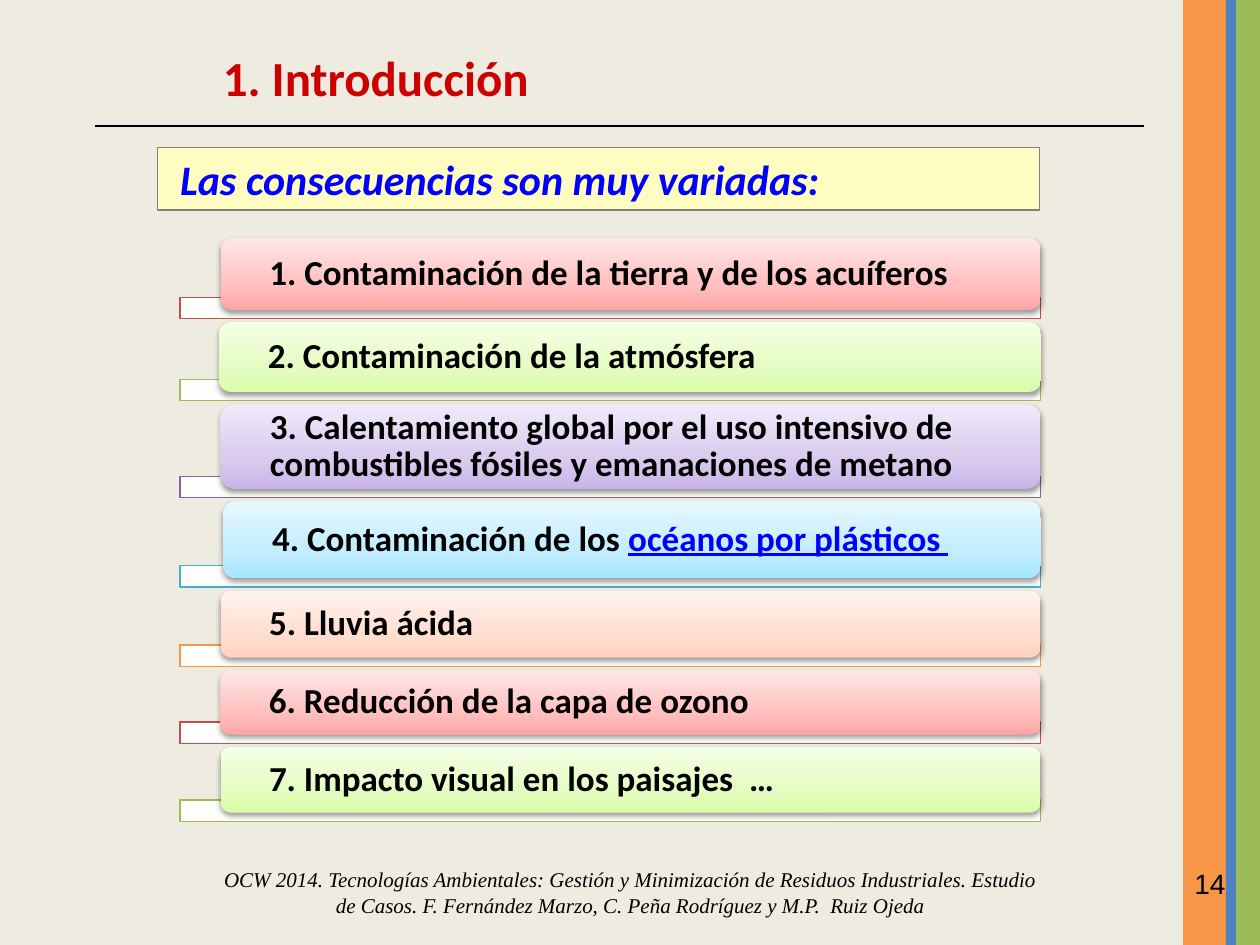
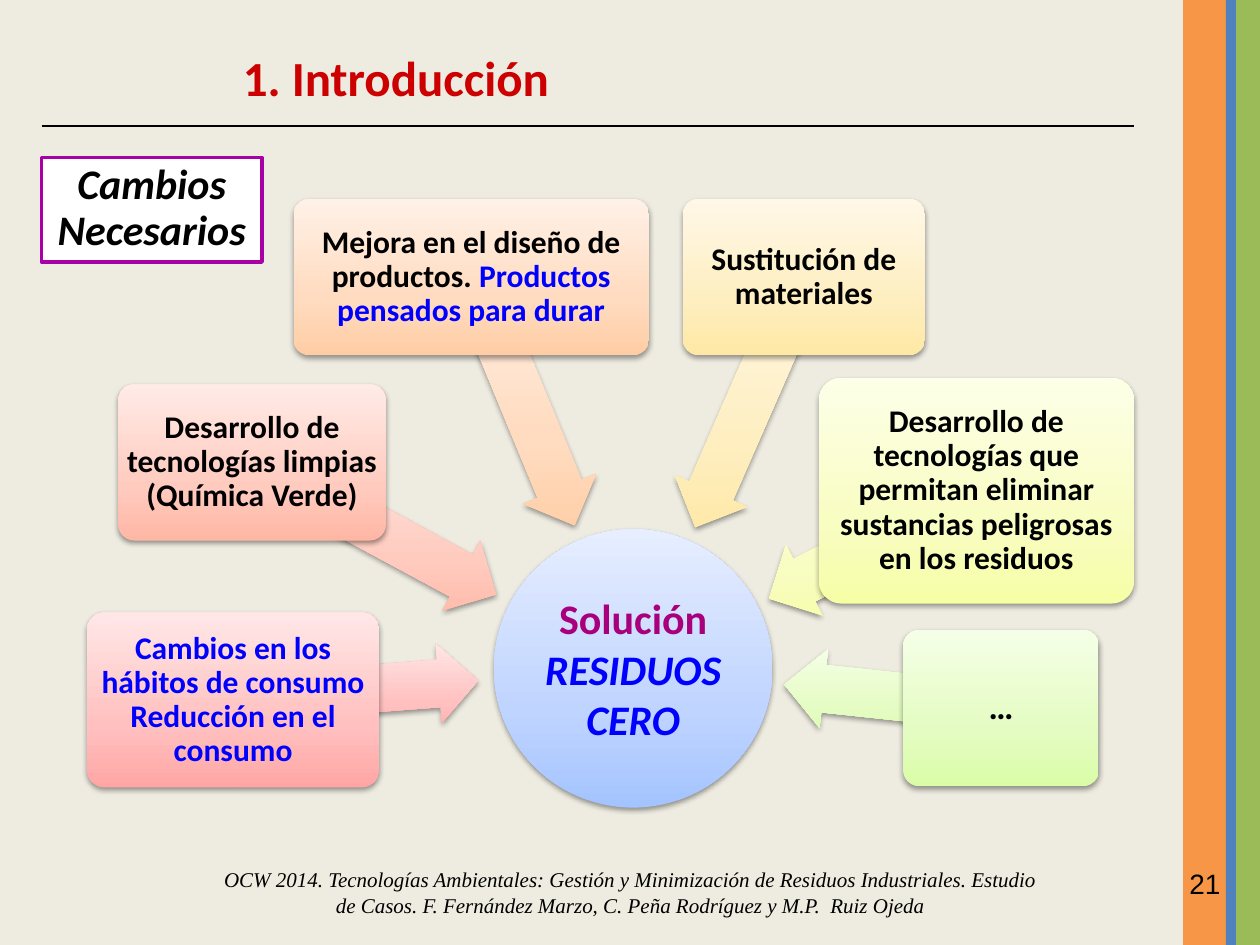
"""Build two slides on the consequences of waste and the changes it calls for."""
from pptx import Presentation
from pptx.dml.color import RGBColor
from pptx.enum.shapes import MSO_CONNECTOR, MSO_SHAPE
from pptx.enum.text import MSO_ANCHOR, PP_ALIGN
from pptx.oxml import parse_xml
from pptx.oxml.ns import nsdecls, qn
from pptx.util import Inches, Pt

BACKGROUND, BLACK, WHITE, BLUE = "EEECE1", "000000", "FFFFFF", "0000FF"
RED, PURPLE, MAGENTA = "CC0000", "A800A6", "A8007D"
FOOTER = ("OCW 2014. Tecnologías Ambientales: Gestión y Minimización de Residuos "
          "Industriales. Estudio de Casos. F. Fernández Marzo, C. Peña Rodríguez "
          "y M.P.  Ruiz Ojeda")
BANDS = [(9.39, 0.35, "F79646"), (9.73, 0.08, "4F81BD"), (9.81, 0.19, "9BBB59")]
ROSE = ("FFA6A5", "FFC0BF", "FFE7E7")
SALMON = ("FFB7A5", "FFCBBF", "FFEBE7")
PEACH = ("FFD2BD", "FFDED0", "FFF2ED")
ORANGE = ("FFCDA5", "FFDBBF", "FFF1E7")
GOLD = ("FFE8A5", "FEEEC0", "FFF8E7")
YELLOW = ("F6FEA6", "F8FDC1", "FDFFE7")
GREEN = ("DAFDA7", "E4FCC2", "F5FFE7")
LILAC = ("C9B5E8", "D8CBEE", "F0EAF9")
SKY = ("A7E6FF", "C1EDFF", "E7F8FF")
AZURE = ("A4C4FF", "BFD4FF", "E6EEFF")


def add_block(slide, kind, box, fill=None, line=None, line_width=0.75):
    """Add a shape; a tuple fill makes a shaded block with a soft shadow."""
    left, top, width, height = (Inches(value) for value in box)
    if kind is None:
        return slide.shapes.add_textbox(left, top, width, height)
    block = slide.shapes.add_shape(kind, left, top, width, height)
    if line:
        block.line.color.rgb = RGBColor.from_string(line)
        block.line.width = Pt(line_width)
    else:
        block.line.fill.background()
    if isinstance(fill, str):
        block.shadow.inherit = False
        block.fill.solid()
        block.fill.fore_color.rgb = RGBColor.from_string(fill)
        return block
    stops = "".join(f'<a:gs pos="{position}"><a:srgbClr val="{color}"/></a:gs>'
                    for position, color in zip((0, 35000, 100000), fill))
    properties = block._element.spPr
    properties.find(qn("a:ln")).addprevious(parse_xml(
        f'<a:gradFill {nsdecls("a")} rotWithShape="0"><a:gsLst>{stops}</a:gsLst>'
        '<a:lin ang="16200000" scaled="0"/></a:gradFill>'))
    properties.append(parse_xml(
        f'<a:effectLst {nsdecls("a")}><a:outerShdw blurRad="40000" dist="20000" '
        'dir="5400000" rotWithShape="0"><a:srgbClr val="000000"><a:alpha val="38000"/>'
        '</a:srgbClr></a:outerShdw></a:effectLst>'))
    return block


def write(block, paragraphs, size, font="Calibri", align=PP_ALIGN.LEFT,
          anchor=MSO_ANCHOR.TOP, margins=(0.1, 0.05, 0.1, 0.05), spacing=None):
    """Fill a block with paragraphs of (text, colour, *styles) runs."""
    frame = block.text_frame
    frame.word_wrap = True
    frame.vertical_anchor = anchor
    (frame.margin_left, frame.margin_top,
     frame.margin_right, frame.margin_bottom) = (Inches(margin) for margin in margins)
    for index, runs in enumerate(paragraphs):
        paragraph = frame.add_paragraph() if index else frame.paragraphs[0]
        paragraph.alignment = align
        paragraph.line_spacing = spacing
        for text, color, *styles in runs:
            run = paragraph.add_run()
            run.text = text
            run.font.name = font
            run.font.size = Pt(size)
            run.font.color.rgb = RGBColor.from_string(color)
            for style in styles:
                setattr(run.font, style, True)


prs = Presentation()
prs.slide_width, prs.slide_height = Inches(10), Inches(7.5)
prs.slide_master.background.fill.solid()
prs.slide_master.background.fill.fore_color.rgb = RGBColor.from_string(BACKGROUND)

slides = []
for number, number_left, title_left, rule_start, rule_end in [
    ("14", 9.38, 1.67, 0.75, 9.08),
    ("21", 9.34, 1.83, 0.33, 9),
]:
    slide = prs.slides.add_slide(prs.slide_layouts[6])
    slides.append(slide)
    for left, width, color in BANDS:
        add_block(slide, MSO_SHAPE.RECTANGLE, (left, 0, width, 7.5), color)
    rule = slide.shapes.add_connector(
        MSO_CONNECTOR.STRAIGHT, Inches(rule_start), Inches(1), Inches(rule_end), Inches(1))
    rule.line.color.rgb = RGBColor.from_string(BLACK)
    rule.line.width = Pt(0.75)
    rule._element.spPr.append(parse_xml(f'<a:effectLst {nsdecls("a")}/>'))
    write(add_block(slide, None, (title_left, 0.33, 5.42, 0.57)),
          [[("1. Introducción", RED, "bold")]], 28)
    write(add_block(slide, None, (number_left, 6.83, 0.62, 0.52)),
          [[(number, BLACK)]], 16, "Arial")
    write(add_block(slide, None, (1.67, 6.83, 6.67, 0.5)), [[(FOOTER, BLACK, "italic")]],
          12, "Times New Roman", PP_ALIGN.CENTER, MSO_ANCHOR.MIDDLE)
consequences_slide, changes_slide = slides

consequences = [
    (1.75, 0.57, ROSE, "C0504D",
     [("1. Contaminación de la tierra y de los acuíferos", BLACK, "bold")]),
    (1.74, 0.55, GREEN, "9BBB59", [("2. Contaminación de la atmósfera", BLACK, "bold")]),
    (1.75, 0.67, LILAC, "8064A2",
     [("3. Calentamiento global por el uso intensivo de combustibles fósiles "
       "y emanaciones de metano", BLACK, "bold")]),
    (1.77, 0.61, SKY, "4BACC6",
     [("4. Contaminación de los ", BLACK, "bold"),
      ("océanos por plásticos ", BLUE, "bold", "underline")]),
    (1.75, 0.53, PEACH, "F79646", [("5. Lluvia ácida", BLACK, "bold")]),
    (1.75, 0.51, ROSE, "C0504D", [("6. Reducción de la capa de ozono", BLACK, "bold")]),
    (1.75, 0.52, GREEN, "9BBB59",
     [("7. Impacto visual en los paisajes  …", BLACK, "bold")]),
]
top = 1.89
for left, height, shades, outline, runs in consequences:
    tray = add_block(consequences_slide, MSO_SHAPE.RECTANGLE,
                     (1.43, top + height - 0.1, 6.83, 0.17), WHITE, outline)
    tray_color = tray._element.spPr.find(qn("a:solidFill"))[0]
    tray_color.append(parse_xml(f'<a:alpha {nsdecls("a")} val="90000"/>'))
    label = add_block(consequences_slide, MSO_SHAPE.ROUNDED_RECTANGLE,
                      (left, top, 8.26 - left, height), shades)
    write(label, [runs], 20, anchor=MSO_ANCHOR.MIDDLE,
          margins=(0.36, 0, 0.15, 0), spacing=0.9)
    top += height + 0.1

lead = add_block(consequences_slide, MSO_SHAPE.RECTANGLE, (1.25, 1.17, 7, 0.5),
                 "FFFCC1", "808080", 1)
write(lead, [[("Las consecuencias son muy variadas:", BLUE, "bold", "italic")]], 24,
      margins=(0.18, 0.05, 0.1, 0.05))

solution = add_block(changes_slide, MSO_SHAPE.OVAL, (3.92, 4.2, 2.21, 2.21), AZURE)
write(solution, [[("Solución", MAGENTA, "bold")],
                 [("RESIDUOS CERO", BLUE, "bold", "italic")]],
      24, align=PP_ALIGN.CENTER, anchor=MSO_ANCHOR.MIDDLE, margins=(0.02,) * 4)

changes = [
    (ROSE, (1.84, 5.16, 1.96), 175.6, (0.69, 4.86, 2.32, 1.39), 18,
     [("Cambios en los hábitos de consumo Reducción en el consumo", BLUE, "bold")]),
    (SALMON, (1.87, 3.88, 2.2), 208.4, (0.94, 3.05, 2.12, 1.24), 18,
     [("Desarrollo de tecnologías limpias (Química Verde)", BLACK, "bold")]),
    (ORANGE, (3.09, 2.87, 2.13), 247.6, (2.33, 1.58, 2.82, 1.24), 18,
     [("Mejora en el diseño de productos. ", BLACK, "bold"),
      ("Productos pensados para durar", BLUE, "bold")]),
    (GOLD, (4.87, 2.88, 2.16), 293.6, (5.42, 1.58, 1.92, 1.24), 18,
     [("Sustitución de materiales", BLACK, "bold")]),
    (YELLOW, (6, 4.01, 1.85), 332.6, (6.5, 3, 2.5, 1.79), 18,
     [("Desarrollo de tecnologías que permitan eliminar sustancias peligrosas "
       "en los residuos", BLACK, "bold")]),
    (GREEN, (6.22, 5.21, 1.73), 6.1, (7.17, 5, 1.55, 1.24), 20, [("…", BLACK, "bold")]),
]
for shades, arrow_place, angle, box, size, runs in changes:
    arrow = add_block(changes_slide, MSO_SHAPE.LEFT_ARROW, (*arrow_place, 0.63), shades)
    arrow.adjustments[0] = 0.6
    arrow.rotation = angle
    change = add_block(changes_slide, MSO_SHAPE.ROUNDED_RECTANGLE, box, shades)
    change.adjustments[0] = 0.1
    write(change, [runs], size, align=PP_ALIGN.CENTER, anchor=MSO_ANCHOR.MIDDLE,
          margins=(0,) * 4, spacing=0.9)

heading = add_block(changes_slide, MSO_SHAPE.RECTANGLE, (0.33, 1.25, 1.75, 0.83),
                    WHITE, PURPLE, 2)
write(heading, [[("Cambios Necesarios", BLACK, "bold", "italic")]], 24,
      align=PP_ALIGN.CENTER, spacing=0.9)

prs.save("out.pptx")
